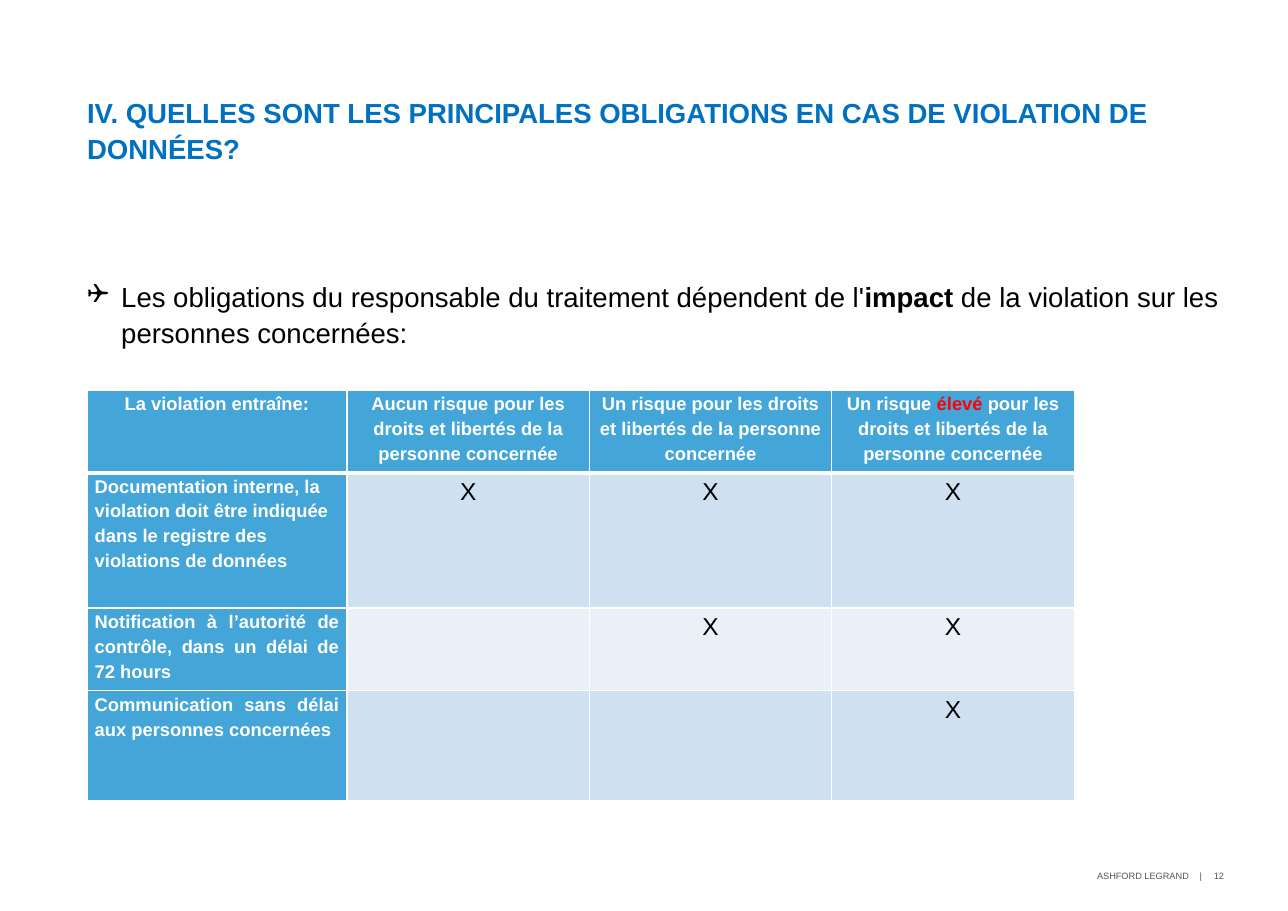
from lxml import etree
from pptx import Presentation
from pptx.dml.color import RGBColor
from pptx.enum.text import MSO_ANCHOR, PP_ALIGN
from pptx.oxml.ns import qn
from pptx.util import Inches, Pt

LEFT, MID, RIGHT, JUST = PP_ALIGN.LEFT, PP_ALIGN.CENTER, PP_ALIGN.RIGHT, PP_ALIGN.JUSTIFY
TOP, CENTRE = MSO_ANCHOR.TOP, MSO_ANCHOR.MIDDLE
WHITE, BLACK, RED = "FFFFFF", "000000", "FF0000"
TITLE_BLUE, CELL_BLUE, GREY = "0070C0", "44A5D8", "4E575C"
BANDS = ("CFE1F0", "E9F0F8")

# Content: a text is a list of (words, bold, colour)
TITLE = [("IV. QUELLES SONT LES PRINCIPALES OBLIGATIONS EN CAS DE VIOLATION DE DONNÉES?",
          True, TITLE_BLUE)]
INTRO = [("Les obligations du responsable du traitement dépendent de l'", False, BLACK),
         ("impact", True, BLACK),
         (" de la violation sur les personnes concernées:", False, BLACK)]
HEAD = [
    [("La violation entraîne:", True, WHITE)],
    [("Aucun risque pour les droits et libertés de la personne concernée", True, WHITE)],
    [("Un risque pour les droits et libertés de la personne concernée", True, WHITE)],
    [("Un risque ", True, WHITE), ("élevé ", True, RED),
     ("pour les droits et libertés de la personne concernée", True, WHITE)],
]
# Duty, its alignment, marks for each level of risk
DUTIES = [
    ("Documentation interne, la violation doit être indiquée dans le registre "
     "des violations de données", LEFT, "XXX"),
    ("Notification à l’autorité de contrôle, dans un délai de 72 hours", JUST, " XX"),
    ("Communication sans délai aux personnes concernées", JUST, "  X"),
]
FOOTER = [("ASHFORD LEGRAND", 8.28, 2.51), ("|", 10.71, 0.2), ("12", 10.6, 0.51)]

# Layout in inches
WIDE, HIGH = 11.69, 8.27
EDGE = 0.79
COLS = [2.36] + [2.2] * 3
ROWS = [0.75, 1.23, 0.75, 1]


def rgb(code):
    return RGBColor.from_string(code)


def write(para, parts, size, align=LEFT, line=1.0, after=0):
    para.alignment, para.line_spacing, para.space_after = align, line, Pt(after)
    for words, bold, colour in parts:
        run = para.add_run()
        run.text = words
        run.font.name, run.font.size, run.font.bold = "Arial", Pt(size), bold
        run.font.color.rgb = rgb(colour)


def add_text(x, y, w, h, anchor=TOP):
    frame = slide.shapes.add_textbox(*map(Inches, (x, y, w, h))).text_frame
    frame.word_wrap, frame.vertical_anchor = True, anchor
    frame.margin_left = frame.margin_right = frame.margin_top = frame.margin_bottom = 0
    return frame.paragraphs[0]


def set_edges(cell, row):
    """White rules on all sides, thicker under the head row."""
    widths = {"L": 1, "R": 1, "T": 3 if row == 1 else 1, "B": 3 if row == 0 else 1}
    props = cell._tc.get_or_add_tcPr()
    for i, (side, width) in enumerate(widths.items()):
        rule = etree.Element(qn("a:ln" + side), w=str(Pt(width)))
        fill = etree.SubElement(rule, qn("a:solidFill"))
        etree.SubElement(fill, qn("a:srgbClr"), val=WHITE)
        props.insert(i, rule)


prs = Presentation()
prs.slide_width, prs.slide_height = Inches(WIDE), Inches(HIGH)
slide = prs.slides.add_slide(prs.slide_layouts[6])

# Title
write(add_text(EDGE, 0.84, 10.09, 0.64), TITLE, 18, line=1.1, after=6)

# Bulleted introduction
intro = add_text(EDGE, 2.51, 10.32, 0.8)
write(intro, INTRO, 18, line=1.1, after=6)
props = intro._p.get_or_add_pPr()
props.set("marL", str(Inches(0.31)))
props.set("indent", str(-Inches(0.31)))
etree.SubElement(props, qn("a:buFont"), typeface="Wingdings")
etree.SubElement(props, qn("a:buChar"), char="❑")

# Table of duties
grid = [[(text, 12, MID) for text in HEAD]]
for duty, align, marks in DUTIES:
    grid.append([([(duty, True, WHITE)], 12, align)]
                + [([(mark, False, BLACK)] if mark == "X" else [], 16, MID) for mark in marks])

table = slide.shapes.add_table(len(ROWS), len(COLS), Inches(EDGE), Inches(3.54),
                               Inches(sum(COLS)), Inches(sum(ROWS))).table
for col, width in zip(table.columns, COLS):
    col.width = Inches(width)
for row, height in zip(table.rows, ROWS):
    row.height = Inches(height)
for r, line in enumerate(grid):
    for c, (parts, size, align) in enumerate(line):
        cell = table.cell(r, c)
        cell.margin_left = cell.margin_right = Inches(0.07)
        cell.margin_top = cell.margin_bottom = 0
        cell.fill.solid()
        cell.fill.fore_color.rgb = rgb(CELL_BLUE if r == 0 or c == 0 else BANDS[(r - 1) % 2])
        set_edges(cell, r)
        if parts:
            write(cell.text_frame.paragraphs[0], parts, size, align, 1.2, 12)

# Footer
for words, x, width in FOOTER:
    write(add_text(x, 7.85, width, 0.2, CENTRE), [(words, False, GREY)], 6, RIGHT)

prs.save("out.pptx")
